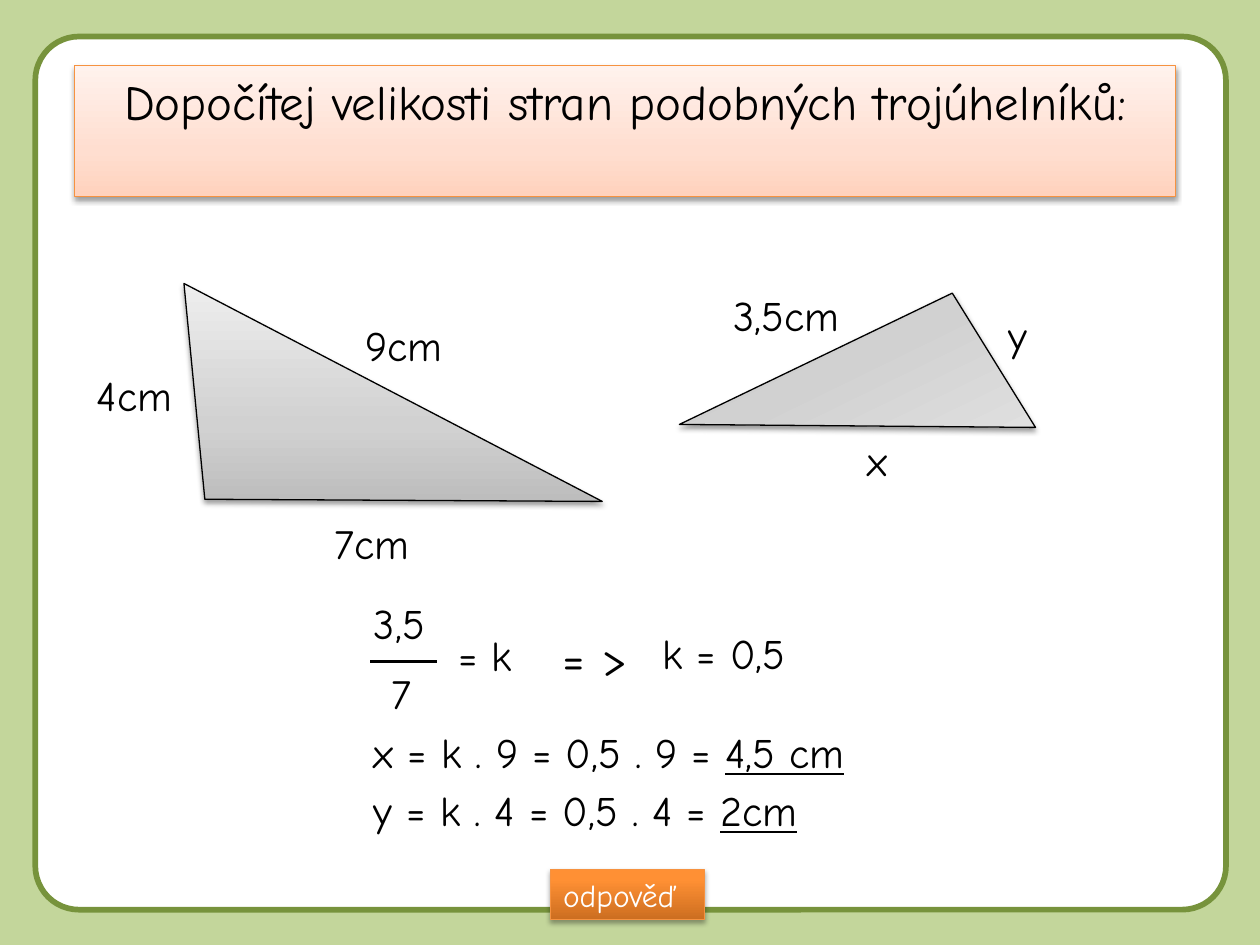
from lxml import etree
from pptx import Presentation
from pptx.dml.color import RGBColor
from pptx.enum.shapes import MSO_CONNECTOR, MSO_SHAPE
from pptx.enum.text import MSO_ANCHOR, PP_ALIGN
from pptx.oxml.ns import qn
from pptx.util import Inches, Pt

RECTANGLE = MSO_SHAPE.RECTANGLE
ROUNDED = MSO_SHAPE.ROUNDED_RECTANGLE
STRAIGHT = MSO_CONNECTOR.STRAIGHT
TOP = MSO_ANCHOR.TOP
LEFT, CENTER = PP_ALIGN.LEFT, PP_ALIGN.CENTER

COLORS = {
    "background": "C3D69B", "frame": "77933C", "orange": "F69240",
    "white": "FFFFFF", "black": "000000",
}
# Gradient stops as (percent, colour), from bottom to top
PEACH = [(0, "FFD2BD"), (35, "FFDED0"), (100, "FFF2ED")]
GREY = [(0, "BDBDBD"), (35, "D1D1D1"), (100, "EEEEEE")]
ORANGE = [(0, "CC6E20"), (80, "FF9034"), (100, "FF9136")]

COLUMNS, ROWS = 100, 75
CELL = Inches(0.1)
TRIANGLE_CORNERS = [(0.05, 0.99), (1, 1), (0, 0)]


def rgb(name):
    return RGBColor.from_string(COLORS[name])


def cells(*counts):
    return [round(count * CELL) for count in counts]


def write_text(shape, lines, size=24, color="black", align=LEFT, space=0):
    """Each line is a list of (text, underlined) spans."""
    frame = shape.text_frame
    frame.word_wrap = True
    frame.vertical_anchor = TOP
    for index, spans in enumerate(lines):
        para = frame.add_paragraph() if index else frame.paragraphs[0]
        para.alignment = align
        para.space_before = Pt(space if index else 0)
        for text, underlined in spans:
            span = para.add_run()
            span.text = text
            font = span.font
            font.name, font.size = "Comic Neue", Pt(size)
            font.color.rgb = rgb(color)
            if underlined:
                font.underline = True


def add_xml(parent, tag, **attributes):
    return etree.SubElement(parent, qn(tag), {k: str(v) for k, v in attributes.items()})


class Worksheet:
    def __init__(self, deck):
        self.slide = deck.slides.add_slide(deck.slide_layouts[6])
        self.shapes = self.slide.shapes
        fill = self.slide.background.fill
        fill.solid()
        fill.fore_color.rgb = rgb("background")

    def outline(self, shape, color, width=0.75):
        shape.line.color.rgb = rgb(color)
        shape.line.width = Pt(width)

    def shade(self, shape, stops, opacity=38):
        """Vertical gradient with a soft shadow below the shape."""
        shape.fill.gradient()
        shape.fill.gradient_angle = 90
        properties = shape._element.spPr
        stop_list = properties.find(".//" + qn("a:gsLst"))
        for old_stop in list(stop_list):
            stop_list.remove(old_stop)
        for percent, color in stops:
            stop = add_xml(stop_list, "a:gs", pos=percent * 1000)
            add_xml(stop, "a:srgbClr", val=color)
        shape.shadow.inherit = False
        effects = properties.find(qn("a:effectLst"))
        shadow = add_xml(effects, "a:outerShdw", blurRad=Pt(3.1), dist=Pt(1.6),
                         dir=90 * 60000, rotWithShape=0)
        color = add_xml(shadow, "a:srgbClr", val=COLORS["black"])
        add_xml(color, "a:alpha", val=opacity * 1000)

    def frame(self, *place):
        shape = self.shapes.add_shape(ROUNDED, *cells(*place))
        shape.adjustments[0] = 0.05
        shape.shadow.inherit = False
        shape.fill.solid()
        shape.fill.fore_color.rgb = rgb("white")
        self.outline(shape, "frame", 3.25)

    def panel(self, text, place, stops, opacity=38, **style):
        shape = self.shapes.add_shape(RECTANGLE, *cells(*place))
        self.outline(shape, "orange")
        self.shade(shape, stops, opacity)
        write_text(shape, [[(text, False)]], **style)

    def triangle(self, left, top, width, height, rotation=0):
        corners = [cells(left + x * width, top + y * height) for x, y in TRIANGLE_CORNERS]
        builder = self.shapes.build_freeform(*corners[0])
        builder.add_line_segments(corners[1:], close=True)
        shape = builder.convert_to_shape()
        shape.rotation = rotation
        self.outline(shape, "black")
        self.shade(shape, GREY)

    def label(self, text, left, top, width, height=5, filled=True, size=24):
        box = self.shapes.add_textbox(*cells(left, top, width, height))
        if filled:
            box.fill.solid()
            box.fill.fore_color.rgb = rgb("white")
        write_text(box, [[(text, False)]], size=size)

    def results(self, lines, *place):
        box = self.shapes.add_textbox(*cells(*place))
        write_text(box, lines, space=4)

    def fraction_bar(self, left, right, row):
        bar = self.shapes.add_connector(STRAIGHT, *cells(left, row, right, row))
        self.outline(bar, "black", 2.25)
        add_xml(bar._element.spPr, "a:effectLst")


def main():
    deck = Presentation()
    deck.slide_width, deck.slide_height = cells(COLUMNS, ROWS)
    sheet = Worksheet(deck)

    sheet.frame(2.8, 2.9, 94.5, 69.3)
    sheet.panel("Dopočítej velikosti stran podobných trojúhelníků:",
                (5.9, 5.2, 87.4, 10.4), PEACH, size=28, align=CENTER)

    for side in [("9cm", 28, 24.9, 8.7), ("4cm", 6.7, 28.8, 11.8),
                 ("7cm", 25.6, 40.6, 8.7), ("3,5cm", 57.2, 22.5, 12.6),
                 ("x", 67.9, 34, 6.3), ("y", 79.1, 24.1, 4.7)]:
        sheet.label(*side)
    sheet.triangle(14.6, 22.5, 33.2, 17.3)
    sheet.triangle(55.4, 27.5, 25.3, 12.6, rotation=154)

    sheet.panel("odpověď", (43.7, 69, 12.2, 4), ORANGE, opacity=35,
                size=18, color="white")

    sheet.results([[("x = k . 9 = 0,5 . 9 = ", False), ("4,5 cm", True)],
                   [("y = k . 4 = 0,5 . 4 = ", False), ("2cm", True)]],
                  28.7, 57.2, 42.4, 9.8)
    sheet.label("3,5", 28.7, 46.9, 7.3)
    sheet.label("7", 30.1, 52.5, 4)
    sheet.fraction_bar(29.4, 34.7, 52.5)
    sheet.label("= k", 35.4, 49.5, 10.7)
    sheet.label("= >", 43.7, 49.3, 8.7, 5.7, filled=False, size=28)
    sheet.label("k = 0,5", 51.6, 49.3, 20.5, filled=False)

    deck.save("out.pptx")


if __name__ == "__main__":
    main()
